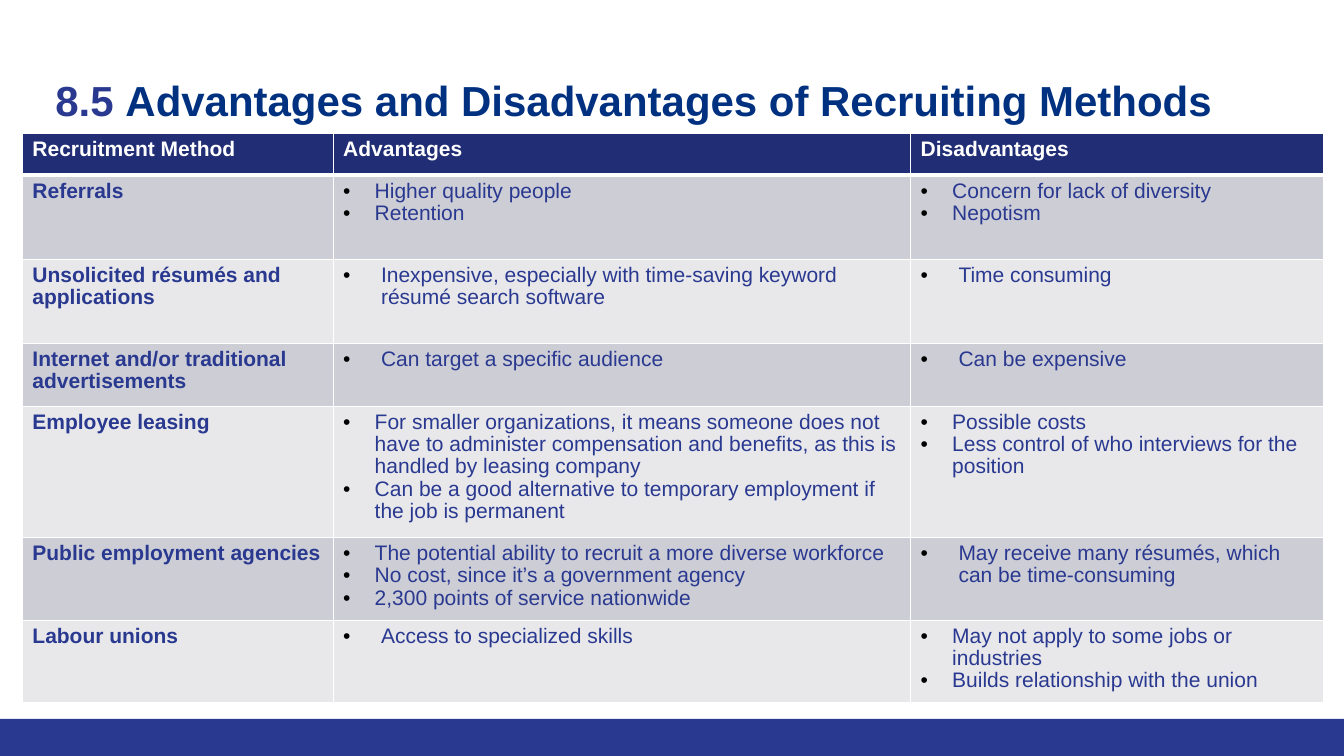
from lxml.etree import SubElement
from pptx import Presentation
from pptx.dml.color import RGBColor
from pptx.enum.shapes import MSO_SHAPE
from pptx.enum.text import MSO_ANCHOR
from pptx.oxml.ns import qn
from pptx.util import Pt

INDIGO = RGBColor(0x2A, 0x39, 0x90)
NAVY = RGBColor(0x21, 0x2D, 0x74)
TITLE_BLUE = RGBColor(0x00, 0x31, 0x80)
DARK_BAND = RGBColor(0xCD, 0xCD, 0xD6)
LIGHT_BAND = RGBColor(0xE8, 0xE8, 0xEB)
WHITE = RGBColor(0xFF, 0xFF, 0xFF)
BLACK = RGBColor(0x00, 0x00, 0x00)

PAGE_WIDTH, PAGE_HEIGHT = 960, 540
COLUMN_WIDTHS = [222, 412.5, 295]
ROW_HEIGHTS = [30, 60, 60, 45, 90, 57, 57]
HEADINGS = ["Recruitment Method", "Advantages", "Disadvantages"]
METHODS = [
    ("Referrals",
     ["Higher quality people", "Retention"],
     ["Concern for lack of diversity", "Nepotism"]),
    ("Unsolicited résumés and applications",
     ["Inexpensive, especially with time-saving keyword résumé search software"],
     ["Time consuming"]),
    ("Internet and/or traditional advertisements",
     ["Can target a specific audience"],
     ["Can be expensive"]),
    ("Employee leasing",
     ["For smaller organizations, it means someone does not have to administer "
      "compensation and benefits, as this is handled by leasing company",
      "Can be a good alternative to temporary employment if the job is permanent"],
     ["Possible costs", "Less control of who interviews for the position"]),
    ("Public employment agencies",
     ["The potential ability to recruit a more diverse workforce",
      "No cost, since it’s a government agency",
      "2,300 points of service nationwide"],
     ["May receive many résumés, which can be time-consuming"]),
    ("Labour unions",
     ["Access to specialized skills"],
     ["May not apply to some jobs or industries",
      "Builds relationship with the union"]),
]


def set_attributes(target, values):
    for name, value in values.items():
        setattr(target, name, value)


def add_span(para, text, size, color, bold):
    span = para.add_run()
    span.text = text
    set_attributes(span.font, {"name": "Arial", "size": Pt(size), "bold": bold})
    span.font.color.rgb = color


def add_solid_fill(parent, color):
    fill = SubElement(parent, qn("a:solidFill"))
    SubElement(fill, qn("a:srgbClr"), val=str(color))


def add_bullet(para, indent):
    properties = para._p.get_or_add_pPr()
    properties.set("marL", str(Pt(indent)))
    properties.set("indent", str(-Pt(indent)))
    color = SubElement(properties, qn("a:buClr"))
    SubElement(color, qn("a:srgbClr"), val=str(BLACK))
    SubElement(properties, qn("a:buFont"), typeface="Arial")
    SubElement(properties, qn("a:buChar"), char="•")


def style_cell(cell, fill, bottom_width):
    """Give the cell its white borders and its fill, in schema order."""
    properties = cell._tc.get_or_add_tcPr()
    for side, width in {"L": 1, "R": 1, "T": 1, "B": bottom_width}.items():
        line = SubElement(properties, qn(f"a:ln{side}"), w=str(Pt(width)))
        add_solid_fill(line, WHITE)
    cell.fill.solid()
    cell.fill.fore_color.rgb = fill


def write_cell(cell, lines, color, bold, bulleted):
    indent = 27 if len(lines) == 1 else 22.5
    frame = cell.text_frame
    for index, text in enumerate(lines):
        para = frame.add_paragraph() if index else frame.paragraphs[0]
        para.line_spacing = 0.96
        if bulleted:
            add_bullet(para, indent)
        add_span(para, text, 15, color, bold)


def add_footer_bar(page, left, top, width, height):
    bar = page.shapes.add_shape(MSO_SHAPE.RECTANGLE, Pt(left), Pt(top), Pt(width), Pt(height))
    bar.shadow.inherit = False
    bar.fill.solid()
    bar.fill.fore_color.rgb = INDIGO
    bar.line.fill.background()


def add_title(page, left, top, width, height):
    box = page.shapes.add_textbox(Pt(left), Pt(top), Pt(width), Pt(height))
    frame = box.text_frame
    set_attributes(frame, {
        "word_wrap": True, "vertical_anchor": MSO_ANCHOR.TOP,
        "margin_left": Pt(7.2), "margin_right": Pt(7.2),
        "margin_top": Pt(10), "margin_bottom": Pt(7.2),
    })
    para = frame.paragraphs[0]
    add_span(para, "8.5 ", 30, INDIGO, True)
    add_span(para, "Advantages and Disadvantages of Recruiting Methods", 30, TITLE_BLUE, True)


def add_methods_table(page, left, top):
    table = page.shapes.add_table(
        len(ROW_HEIGHTS), len(COLUMN_WIDTHS), Pt(left), Pt(top),
        Pt(sum(COLUMN_WIDTHS)), Pt(sum(ROW_HEIGHTS))).table
    for column, width in zip(table.columns, COLUMN_WIDTHS):
        column.width = Pt(width)
    for row, height in zip(table.rows, ROW_HEIGHTS):
        row.height = Pt(height)

    for column, heading in enumerate(HEADINGS):
        cell = table.cell(0, column)
        style_cell(cell, NAVY, 3)
        write_cell(cell, [heading], WHITE, True, False)

    for row, (method, advantages, disadvantages) in enumerate(METHODS, 1):
        band = DARK_BAND if row % 2 else LIGHT_BAND
        for column, lines in enumerate([[method], advantages, disadvantages]):
            cell = table.cell(row, column)
            style_cell(cell, band, 1)
            write_cell(cell, lines, INDIGO, column == 0, column > 0)


def main():
    deck = Presentation()
    set_attributes(deck, {"slide_width": Pt(PAGE_WIDTH), "slide_height": Pt(PAGE_HEIGHT)})
    page = deck.slides.add_slide(deck.slide_layouts[6])
    add_footer_bar(page, 0, 513.5, PAGE_WIDTH, 26.5)
    add_title(page, 32.5, 43.2, 894, 64)
    add_methods_table(page, 16, 95.25)
    deck.save("out.pptx")


if __name__ == "__main__":
    main()
